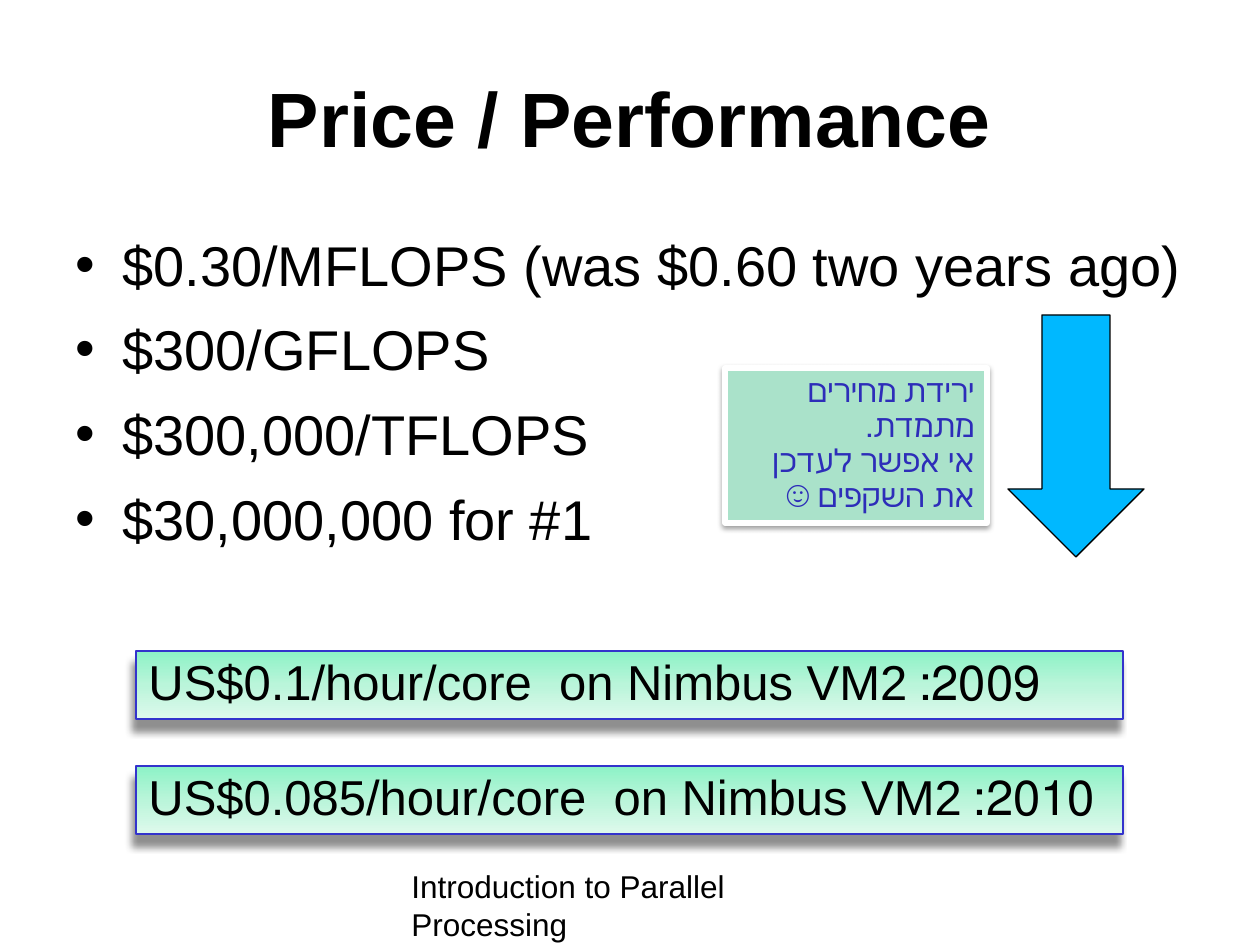
from copy import deepcopy

from lxml.etree import SubElement
from pptx import Presentation
from pptx.dml.color import RGBColor
from pptx.enum.shapes import MSO_SHAPE as Preset
from pptx.enum.text import MSO_ANCHOR as Anchor, PP_ALIGN as Align
from pptx.oxml.ns import qn
from pptx.util import Pt

EMU_PER_PX = 914400 / 126
FONT = "Arial"
BLACK = RGBColor(0x00, 0x00, 0x00)
WHITE = RGBColor(0xFF, 0xFF, 0xFF)
SKY = RGBColor(0x00, 0xB8, 0xFF)
NOTE_FILL = RGBColor(0xAA, 0xE2, 0xCA)
NOTE_TEXT = RGBColor(0x2D, 0x2D, 0xB9)
BAR_LINE = RGBColor(0x33, 0x33, 0xCC)
BAR_STOPS = (
    (0, RGBColor(0x8C, 0xF2, 0xC6)),
    (0.5, RGBColor(0xBA, 0xF5, 0xDA)),
    (1, RGBColor(0xDE, 0xF9, 0xEC)),
)


def px(value):
    """Turn pixels into EMU."""
    return round(value * EMU_PER_PX)


def write(frame, *lines, size=18, color=BLACK, bold=False, align=Align.LEFT,
          anchor=Anchor.TOP, rtl=False, bullet=False, before=0, spacing=None):
    """Fill a text frame with one paragraph per line."""
    frame.word_wrap = True
    frame.vertical_anchor = anchor
    for index, line in enumerate(lines):
        paragraph = frame.add_paragraph() if index else frame.paragraphs[0]
        properties = paragraph._p.get_or_add_pPr()
        if rtl:
            properties.set("rtl", "1")
        if bullet:
            properties.set("marL", str(px(47)))
            properties.set("indent", str(px(-47)))
            SubElement(properties, qn("a:buFont"), typeface=FONT)
            SubElement(properties, qn("a:buChar"), char="•")
        paragraph.alignment = align
        if spacing:
            paragraph.line_spacing = spacing
        if index and before:
            paragraph.space_before = Pt(before)
        run = paragraph.add_run()
        run.text = line
        run.font.name = FONT
        run.font.size = Pt(size)
        run.font.bold = bold
        run.font.color.rgb = color


class SlideBuilder:
    """Draw the elements of one slide in a shared style."""

    def __init__(self, presentation):
        self.slide = presentation.slides.add_slide(presentation.slide_layouts[6])

    def text(self, box, *lines, **style):
        """Add a text box."""
        shape = self.slide.shapes.add_textbox(*map(px, box))
        write(shape.text_frame, *lines, **style)

    def shape(self, preset, box, fill, line, width):
        """Add an outlined shape, with a plain fill if one is given."""
        shape = self.slide.shapes.add_shape(preset, *map(px, box))
        shape.shadow.inherit = False
        if fill is not None:
            shape.fill.solid()
            shape.fill.fore_color.rgb = fill
        shape.line.color.rgb = line
        shape.line.width = Pt(width)
        return shape

    def shadow(self, shape, blur, distance, angle, opacity):
        """Give a shape a soft black shadow."""
        effects = shape._element.spPr.find(qn("a:effectLst"))
        outer = SubElement(effects, qn("a:outerShdw"), blurRad=str(Pt(blur)),
                           dist=str(Pt(distance)), dir=str(angle * 60000),
                           rotWithShape="0")
        color = SubElement(outer, qn("a:srgbClr"), val=str(BLACK))
        SubElement(color, qn("a:alpha"), val=str(opacity * 1000))

    def note(self, box, *lines):
        """Add a framed right-to-left note."""
        shape = self.shape(Preset.RECTANGLE, box, NOTE_FILL, WHITE, 3)
        self.shadow(shape, blur=3.1, distance=1.6, angle=90, opacity=38)
        write(shape.text_frame, *lines, color=NOTE_TEXT, align=Align.RIGHT,
              rtl=True, spacing=0.93)

    def price_bar(self, box, line):
        """Add a gradient bar with one right-to-left line."""
        shape = self.shape(Preset.RECTANGLE, box, None, BAR_LINE, 0.75)
        shape.fill.gradient()
        shape.fill.gradient_angle = 270
        first = shape.fill.gradient_stops[0]._gs
        first.addnext(deepcopy(first))
        for stop, (position, color) in zip(shape.fill.gradient_stops, BAR_STOPS):
            stop.position = position
            stop.color.rgb = color
        self.shadow(shape, blur=4, distance=7, angle=110, opacity=43)
        write(shape.text_frame, line, size=28, rtl=True, spacing=0.93)


def main():
    """Build the slide and save it."""
    presentation = Presentation()
    presentation.slide_width = px(1260)
    presentation.slide_height = px(945)
    builder = SlideBuilder(presentation)
    builder.text((399, 861, 461, 66), "Introduction to Parallel Processing")
    builder.text((63, 38, 1134, 158), "Price / Performance", size=44, bold=True,
                 align=Align.CENTER, anchor=Anchor.MIDDLE)
    builder.text((63, 224, 1134, 620), "$0.30/MFLOPS (was $0.60 two years ago)",
                 "$300/GFLOPS", "$300,000/TFLOPS", "$30,000,000 for #1",
                 size=32, bullet=True, before=10)
    prices = ("2009: US$0.1/hour/core  on Nimbus VM2",
              "2010: US$0.085/hour/core  on Nimbus VM2")
    for index, price in enumerate(prices):
        builder.price_bar((136, 651 + 115 * index, 987, 68), price)
    builder.shape(Preset.DOWN_ARROW, (1008, 315, 136, 242), SKY, BLACK, 0.75)
    builder.note((725, 368, 262, 155), "ירידת מחירים מתמדת.",
                 "אי אפשר לעדכן את השקפים ☺")
    presentation.save("out.pptx")


if __name__ == "__main__":
    main()
